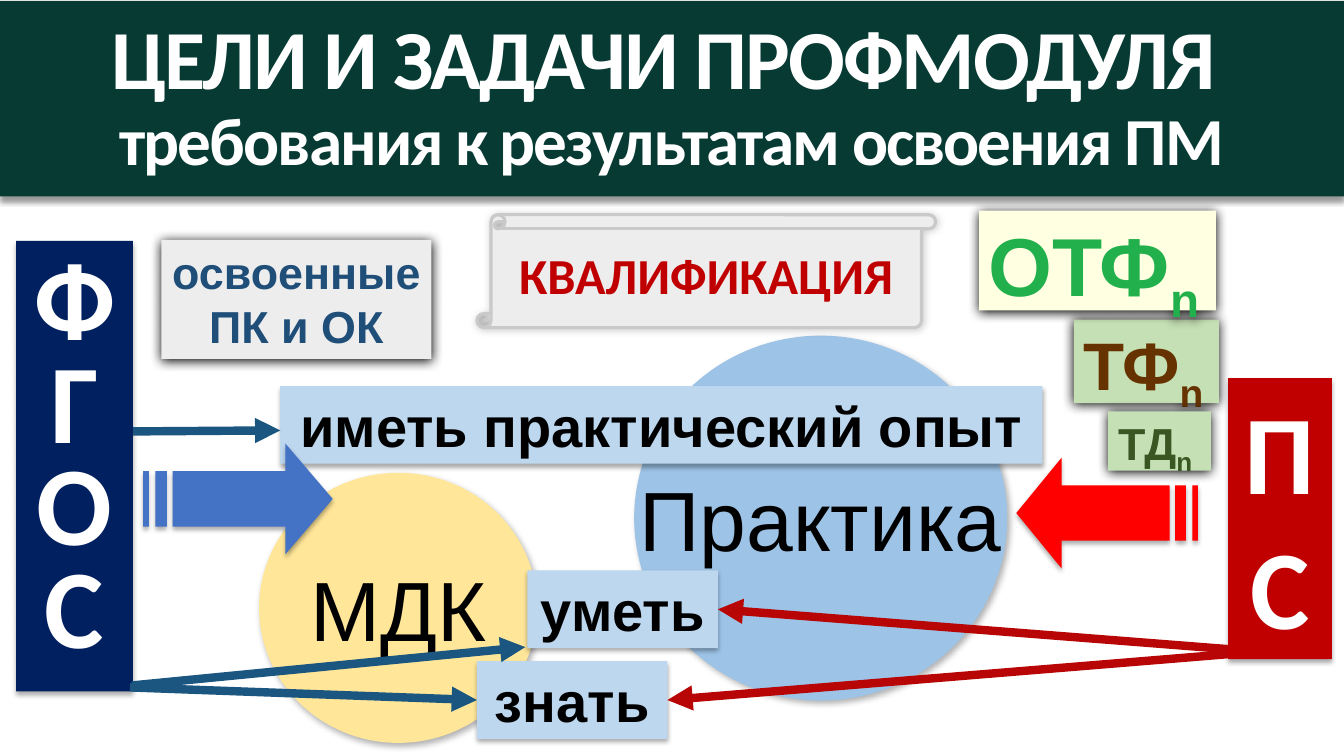
from lxml import etree
from pptx import Presentation
from pptx.dml.color import RGBColor
from pptx.enum.shapes import MSO_CONNECTOR, MSO_SHAPE
from pptx.enum.text import MSO_ANCHOR, MSO_AUTO_SIZE, PP_ALIGN
from pptx.oxml.ns import qn
from pptx.util import Inches, Pt

RECTANGLE, OVAL, SCROLL = MSO_SHAPE.RECTANGLE, MSO_SHAPE.OVAL, MSO_SHAPE.VERTICAL_SCROLL
STRAIGHT = MSO_CONNECTOR.STRAIGHT
TOP, MIDDLE = MSO_ANCHOR.TOP, MSO_ANCHOR.MIDDLE
LEFT, CENTER = PP_ALIGN.LEFT, PP_ALIGN.CENTER
GROW, FIXED = MSO_AUTO_SIZE.SHAPE_TO_FIT_TEXT, MSO_AUTO_SIZE.NONE
LEFT_SIDE, RIGHT_SIDE = 1, 3

COLORS = {
    "white": "FFFFFF", "black": "000000", "header": "083A34", "navy": "002060",
    "crimson": "C00000", "sand": "FFE699", "sky": "9DC3E6", "pale_blue": "BDD7EE",
    "blue": "4472C4", "red": "FF0000", "gray": "EDEDED", "edge": "C9C9C9",
    "ink_blue": "1F4E79", "pale_green": "C5E0B4", "cream": "FFFFE1",
    "brown": "663300", "moss": "385723", "green": "21B04C",
    "link_blue": "1B5681", "link_red": "B80606",
}
SHADOWS = {
    "circle": (30, 4.5, 2.6, 53), "header": (40, 4, 3, 90), "block": (32, 3.5, 2.2, 90),
    "scroll": (20, 6, 1, 45), "card": (100, 8.5, 1, 90),
}


class ModulePage:
    """Holds the style and the current slide, and adds each kind of element."""

    def __init__(self, page):
        self.page = page

    def color(self, name):
        return RGBColor.from_string(COLORS[name])

    def finish(self, shape, fill, shadow):
        shape.fill.solid()
        shape.fill.fore_color.rgb = self.color(fill)
        shape.line.fill.background()
        shape.shadow.inherit = False
        alpha, blur, distance, angle = SHADOWS[shadow]
        effects = shape._element.spPr.find(qn("a:effectLst"))
        outer = etree.SubElement(effects, qn("a:outerShdw"), blurRad=str(Pt(blur)),
                                 dist=str(Pt(distance)), dir=str(angle * 60000),
                                 algn="ctr", rotWithShape="0")
        tint = etree.SubElement(outer, qn("a:srgbClr"), val=COLORS["black"])
        etree.SubElement(tint, qn("a:alpha"), val=str(alpha * 1000))

    def span(self, para, text, size, color, font, bold=True, **marks):
        span = para.add_run()
        span.text = text
        formats = {"size": Pt(size), "name": font, "bold": bold}
        for name, value in formats.items():
            setattr(span.font, name, value)
        span.font.color.rgb = self.color(color)
        for name, value in marks.items():
            span._r.get_or_add_rPr().set(name, value)

    def box(self, bounds, fill, shadow, kind=RECTANGLE, **frame_formats):
        box = self.page.shapes.add_shape(kind, *map(Inches, bounds))
        self.finish(box, fill, shadow)
        formats = {"vertical_anchor": MIDDLE, "word_wrap": True, "auto_size": FIXED}
        for name, value in (formats | frame_formats).items():
            setattr(box.text_frame, name, value)
        return box

    def label(self, box, lines, size, color, font, bold=True, **para_formats):
        for index, line in enumerate(lines):
            frame = box.text_frame
            para = frame.add_paragraph() if index else frame.paragraphs[0]
            for name, value in ({"alignment": CENTER} | para_formats).items():
                setattr(para, name, value)
            self.span(para, line, size, color, font, bold)

    def header(self, bounds, title, subtitle):
        box = self.box(bounds, "header", "header")
        para = box.text_frame.paragraphs[0]
        para.alignment, para.line_spacing = CENTER, 0.9
        self.span(para, title, 60, "white", "Calibri", spc="-140")
        para.add_line_break()
        self.span(para, subtitle, 48, "white", "Calibri", spc="-140")

    def circle(self, bounds, fill, text):
        box = self.box(bounds, fill, "circle", OVAL, word_wrap=False)
        self.label(box, [text], 60, "black", "Arial", False)

    def result(self, bounds, text):
        box = self.box(bounds, "pale_blue", "block", auto_size=GROW)
        self.label(box, [text], 40, "black", "Arial")
        return box

    def indexed_card(self, bounds, fill, text, size, color, wrap):
        box = self.box(bounds, fill, "card", vertical_anchor=TOP, word_wrap=wrap, auto_size=GROW)
        para = box.text_frame.paragraphs[0]
        para.alignment, para.line_spacing = LEFT, 0.9
        properties = para._p.get_or_add_pPr()
        properties.set("marL", str(Inches(0.38)))
        properties.set("indent", str(-Inches(0.38)))
        before = etree.SubElement(properties, qn("a:spcBef"))
        etree.SubElement(before, qn("a:spcPct"), val="20000")
        self.span(para, text, size, color, "Arial")
        self.span(para, "n", size, color, "Arial", baseline="-25000")

    def striped_arrow(self, tail, tip, top, fill):
        length, height = tip - tail, 1.1

        def place(points):
            return [(Inches(tail + x * length), Inches(top + y * height)) for x, y in points]

        low, high, neck = 0.25, 0.75, 0.75
        head = place([(neck, 0), (neck, low), (0.155, low), (0.155, high),
                      (neck, high), (neck, 1), (1, 0.5)])
        stripes = [place([(start, low), (start, high), (end, high), (end, low)])
                   for start, end in ((0.065, 0.125), (0, 0.03))]
        builder = self.page.shapes.build_freeform(*head[0], scale=1.0)
        builder.add_line_segments(head[1:], close=True)
        for stripe in stripes:
            builder.move_to(*stripe[0])
            builder.add_line_segments(stripe[1:], close=True)
        self.finish(builder.convert_to_shape(), fill, "block")

    def arrow(self, start, end, color, target=None, side=None):
        arrow = self.page.shapes.add_connector(STRAIGHT, *map(Inches, start + end))
        if target is not None:
            arrow.end_connect(target, side)
        arrow.line.color.rgb = self.color(color)
        arrow.line.width = Pt(6)
        etree.SubElement(arrow.line._get_or_add_ln(), qn("a:tailEnd"), type="triangle")
        etree.SubElement(arrow._element.spPr, qn("a:effectLst"))


def main():
    deck = Presentation()
    deck.slide_width, deck.slide_height = Inches(13.33), Inches(7.5)
    page = ModulePage(deck.slides.add_slide(deck.slide_layouts[6]))

    page.circle((2.57, 4.69, 2.76, 2.68), "sand", "МДК")
    page.header((0, 0.01, 13.33, 1.94), "ЦЕЛИ И ЗАДАЧИ ПРОФМОДУЛЯ ",
                "требования к результатам освоения ПМ")
    know = page.result((4.73, 6.56, 1.89, 0.77), "знать")
    standard = page.box((0.16, 2.39, 1.16, 4.47), "navy", "block")
    page.label(standard, "ФГОС", 80, "white", "Calibri", line_spacing=0.7, space_before=Pt(6))
    page.circle((6.29, 3.33, 3.7, 3.62), "sky", "Практика")
    able = page.result((5.23, 5.66, 1.89, 0.77), "уметь ")
    page.result((2.78, 3.83, 7.56, 0.77), "иметь практический опыт")
    page.striped_arrow(1.42, 3.3, 4.4, "blue")
    profession = page.box((12.18, 3.75, 1.03, 2.79), "crimson", "block",
                          vertical_anchor=TOP, auto_size=GROW)
    page.label(profession, ["ПС"], 80, "white", "Calibri")
    page.striped_arrow(11.88, 10.08, 4.54, "red")

    scroll = page.box((4.73, 2.13, 4.55, 1.12), "gray", "scroll", SCROLL)
    scroll.line.color.rgb = page.color("edge")
    scroll.line.width = Pt(2.25)
    page.label(scroll, ["КВАЛИФИКАЦИЯ"], 36, "crimson", "Calibri")
    mastered = page.box((1.6, 2.38, 2.68, 1.18), "gray", "card",
                        vertical_anchor=TOP, auto_size=GROW)
    page.label(mastered, ["освоенные ", "ПК и ОК"], 32, "ink_blue", "Arial")

    page.indexed_card((10.65, 3.17, 1.44, 0.83), "pale_green", "ТФ", 48, "brown", False)
    page.indexed_card((10.99, 4.08, 1.02, 0.59), "pale_green", "ТД", 32, "moss", True)
    page.indexed_card((9.71, 2.09, 2.35, 0.99), "cream", "ОТФ", 58.7, "green", False)

    page.arrow((1.31, 6.8), (5.21, 6.42), "link_blue")
    page.arrow((1.29, 6.82), (4.73, 6.94), "link_blue", know, LEFT_SIDE)
    page.arrow((12.18, 6.44), (7.12, 6.05), "link_red", able, RIGHT_SIDE)
    page.arrow((12.18, 6.49), (6.61, 6.94), "link_red", know, RIGHT_SIDE)
    page.arrow((1.32, 4.28), (2.78, 4.27), "link_blue")
    deck.save("out.pptx")


if __name__ == "__main__":
    main()
